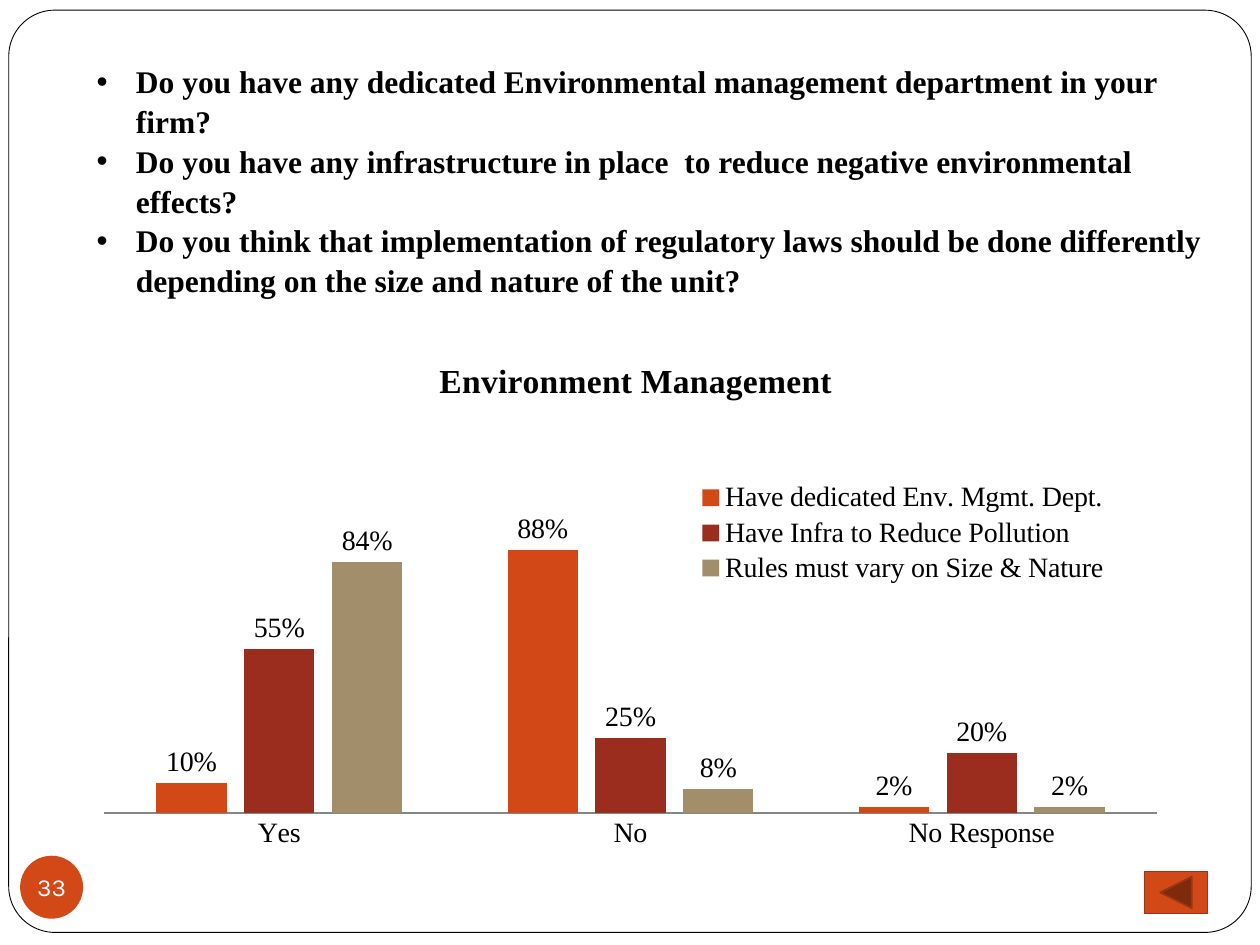
from pptx import Presentation
from pptx.chart.data import CategoryChartData as Data
from pptx.dml.color import RGBColor
from pptx.enum.chart import XL_CHART_TYPE as Kind, XL_LABEL_POSITION as Spot
from pptx.enum.chart import XL_LEGEND_POSITION as Side, XL_TICK_MARK as Tick
from pptx.enum.shapes import MSO_SHAPE as Form
from pptx.enum.text import MSO_ANCHOR as Anchor, MSO_AUTO_SIZE as Fit, PP_ALIGN as Align
from pptx.oxml import parse_xml
from pptx.oxml.ns import nsdecls, qn
from pptx.util import Pt

SERIF = "Times New Roman"
ORANGE = "D34817"
ASKS = [
    "Do you have any dedicated Environmental management department in your firm?",
    "Do you have any infrastructure in place  to reduce negative environmental effects?",
    "Do you think that implementation of regulatory laws should be done differently "
    "depending on the size and nature of the unit?",
]
CATS = ["Yes", "No", "No Response"]
BARS = [
    ("Have dedicated Env. Mgmt. Dept.", (0.1, 0.88, 0.02), ORANGE),
    ("Have Infra to Reduce Pollution", (0.55, 0.25, 0.2), "9B2D1F"),
    ("Rules must vary on Size & Nature", (0.84, 0.08, 0.02), "A28E6A"),
]


def color(code):
    return RGBColor.from_string(code)


def style(font, size, code="000000", name=SERIF, bold=False):
    font.size, font.name, font.bold = Pt(size), name, bold
    font.color.rgb = color(code)


def add_form(slide, form, box, fill, line=None, width=1):
    shape = slide.shapes.add_shape(form, *map(Pt, box))
    shape.shadow.inherit = False
    shape.fill.solid()
    shape.fill.fore_color.rgb = color(fill)
    if line:
        shape.line.color.rgb = color(line)
        shape.line.width = Pt(width)
    else:
        shape.line.fill.background()
    return shape


def add_frame(slide):
    """Draw the rounded border behind everything else."""
    frame = add_form(slide, Form.ROUNDED_RECTANGLE, (5, 5.8, 710, 527), "FFFFFF", "000000", 0.5)
    frame.adjustments[0] = 0.05
    slide.shapes[0].element.addprevious(frame.element)


def add_badge(slide, text):
    badge = add_form(slide, Form.OVAL, (11.5, 489, 36, 36), ORANGE)
    frame = badge.text_frame
    frame.text = text
    frame.word_wrap = False
    frame.vertical_anchor = Anchor.MIDDLE
    frame.margin_left = frame.margin_right = frame.margin_top = frame.margin_bottom = 0
    para = frame.paragraphs[0]
    para.alignment = Align.CENTER
    style(para.runs[0].font, 14, "FFFFFF", "Karla")


def fill_list(body, lines):
    body.left, body.top, body.width, body.height = map(Pt, (48, 31, 648, 138))
    frame = body.text_frame
    frame.text = "\n".join(lines)
    frame.auto_size = Fit.NONE
    for para in frame.paragraphs:
        para.space_before = Pt(0)
        para.line_spacing = 1.05
        props = para._p.get_or_add_pPr()
        props.set("marL", str(Pt(22.5)))
        props.set("indent", str(Pt(-22.5)))
        style(para.runs[0].font, 18, bold=True)


def place(node, index, inner=False, **spots):
    """Give a chart part a manual layout, in fractions of the chart."""
    for old in node.findall(qn("c:layout")):
        node.remove(old)
    tags = '<c:layoutTarget val="inner"/>' if inner else ""
    tags += "".join(f'<c:{key}Mode val="edge"/>' for key in "xy")
    tags += "".join(f'<c:{key} val="{val}"/>' for key, val in spots.items())
    node.insert(index, parse_xml(
        f'<c:layout {nsdecls("c")}><c:manualLayout>{tags}</c:manualLayout></c:layout>'))


def style_axes(chart):
    value = chart.value_axis
    value.minimum_scale, value.maximum_scale = 0, 1
    value.has_major_gridlines = False
    value.visible = False
    cat = chart.category_axis
    cat.major_tick_mark = cat.minor_tick_mark = Tick.NONE
    cat.format.line.color.rgb = color("868686")
    cat.format.line.width = Pt(0.75)


def style_bars(plot):
    plot.gap_width, plot.overlap = 150, -25
    plot.vary_by_categories = False
    for bar, (_, _, code) in zip(plot.series, BARS):
        bar.format.fill.solid()
        bar.format.fill.fore_color.rgb = color(code)
        labels = bar.data_labels
        labels.show_value = True
        labels.number_format, labels.number_format_is_linked = "0%", False
        labels.position = Spot.OUTSIDE_END
        style(labels.font, 16)


def add_bars(slide):
    data = Data(number_format="0%")
    data.categories = CATS
    for name, vals, _ in BARS:
        data.add_series(name, vals)
    chart = slide.shapes.add_chart(
        Kind.COLUMN_CLUSTERED, *map(Pt, (48, 186, 624, 312)), data).chart
    style(chart.font, 16)

    title = chart.chart_title
    title.text_frame.text = "Environment Management"
    style(title.text_frame.paragraphs[0].runs[0].font, 19.2, bold=True)
    place(title._element, 1, x=0.32, y=0.05)

    chart.has_legend = True
    legend = chart.legend
    legend.position = Side.TOP
    legend.include_in_layout = False
    style(legend.font, 16)
    place(legend._element, 1, x=0.55, y=0.28, w=0.4, h=0.2)

    area = chart._chartSpace.chart.plotArea
    place(area, 0, inner=True, x=0.018, y=0.346, w=0.965, h=0.547)
    style_axes(chart)
    style_bars(chart.plots[0])


def main():
    deck = Presentation()
    deck.slide_width, deck.slide_height = Pt(720), Pt(540)
    slide = deck.slides.add_slide(deck.slide_layouts[1])
    title, body = slide.placeholders
    title.element.getparent().remove(title.element)
    fill_list(body, ASKS)
    add_frame(slide)
    add_badge(slide, "33")
    add_form(slide, Form.ACTION_BUTTON_BACK_OR_PREVIOUS, (654, 498, 36, 24), ORANGE, "9C3511")
    add_bars(slide)
    deck.save("out.pptx")


if __name__ == "__main__":
    main()
